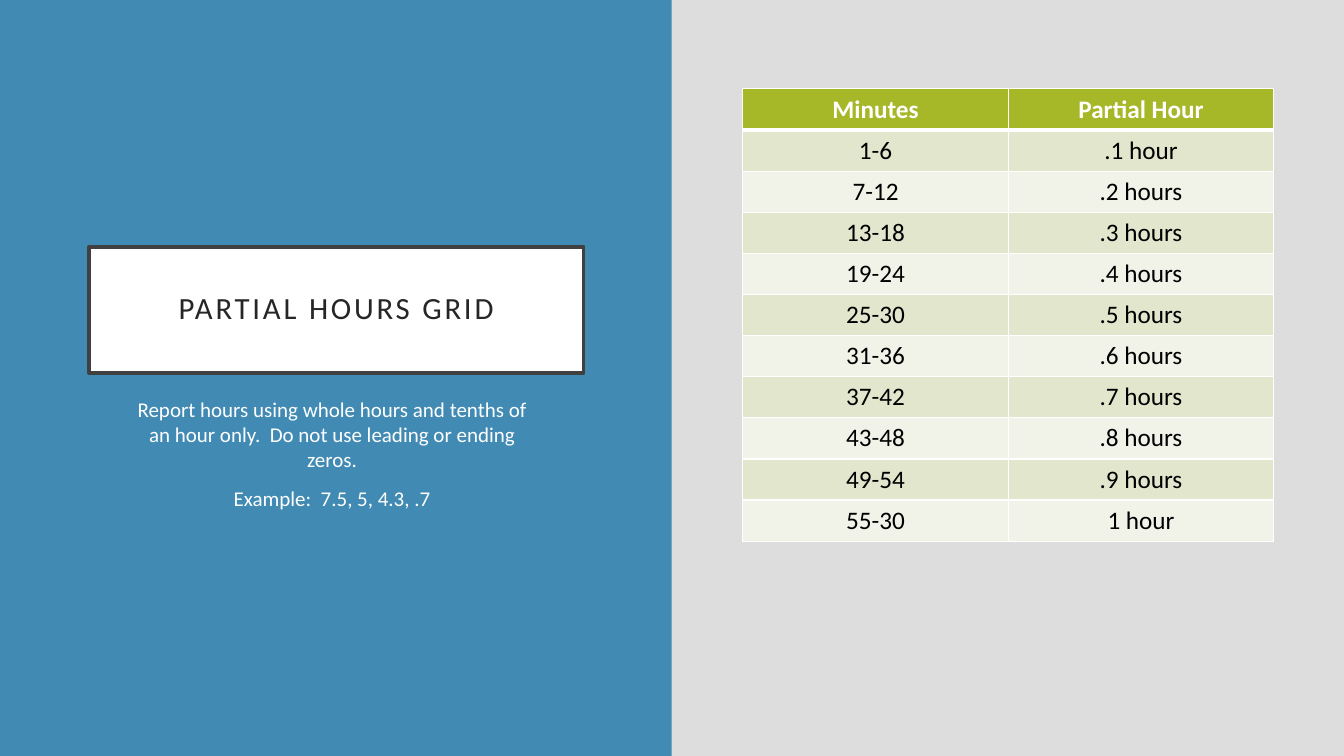
from lxml.etree import SubElement
from pptx import Presentation
from pptx.dml.color import RGBColor
from pptx.enum.shapes import MSO_SHAPE
from pptx.enum.text import MSO_ANCHOR, PP_ALIGN
from pptx.oxml.ns import qn
from pptx.util import Cm, Pt

COLOURS = {
    "background": "DDDDDD",
    "panel": "418AB3",
    "white": "FFFFFF",
    "frame": "404040",
    "title": "262626",
    "header": "A6B727",
    "odd_row": "E1E6CD",
    "even_row": "F1F3E8",
    "black": "000000",
}
FONT = "Calibri"
HEADINGS = ("Minutes", "Partial Hour")
PARTIAL_HOURS = (
    ("1-6", ".1 hour"),
    ("7-12", ".2 hours"),
    ("13-18", ".3 hours"),
    ("19-24", ".4 hours"),
    ("25-30", ".5 hours"),
    ("31-36", ".6 hours"),
    ("37-42", ".7 hours"),
    ("43-48", ".8 hours"),
    ("49-54", ".9 hours"),
    ("55-30", "1 hour"),
)
INSTRUCTIONS = (
    "Report hours using whole hours and tenths of an hour only.  Do not use leading or ending zeros.",
    "Example:  7.5, 5, 4.3, .7",
)


def colour(name):
    """Return the named colour."""
    return RGBColor.from_string(COLOURS[name])


def paint(fill, name):
    """Make a fill solid in the named colour."""
    fill.solid()
    fill.fore_color.rgb = colour(name)


def style_paragraph(para, size, ink, bold=False):
    """Centre a paragraph and set its font."""
    para.alignment = PP_ALIGN.CENTER
    para.font.name = FONT
    para.font.size = Pt(size)
    para.font.bold = bold
    para.font.color.rgb = colour(ink)


def add_rectangle(page, left, top, width, height, fill):
    """Add a plain rectangle without outline or shadow."""
    box = page.shapes.add_shape(MSO_SHAPE.RECTANGLE, left, top, width, height)
    box.shadow.inherit = False
    paint(box.fill, fill)
    box.line.fill.background()
    return box


def add_title(page, text):
    """Add the framed title with widely spaced letters."""
    box = add_rectangle(page, Cm(2.24), Cm(6.22), Cm(12.47), Cm(3.18), "white")
    paint(box.line.fill, "frame")
    box.line.width = Pt(2.5)
    frame = box.text_frame
    frame.word_wrap = True
    frame.vertical_anchor = MSO_ANCHOR.MIDDLE
    frame.margin_left = frame.margin_right = Cm(0.5)
    frame.margin_top = frame.margin_bottom = Cm(0.5)
    para = frame.paragraphs[0]
    style_paragraph(para, 22, "title")
    para.line_spacing = 0.9
    span = para.add_run()
    span.text = text
    span._r.get_or_add_rPr().set("spc", "200")


def add_instructions(page, lines):
    """Add the instructions below the title."""
    box = page.shapes.add_textbox(Cm(3.1), Cm(9.86), Cm(10.54), Cm(6.1))
    frame = box.text_frame
    frame.word_wrap = True
    frame.text = "\n".join(lines)
    for para in frame.paragraphs:
        style_paragraph(para, 15, "white")
        para.space_before = Pt(10)


def add_border(cell, side, width):
    """Draw one white cell border."""
    properties = cell._tc.get_or_add_tcPr()
    line = SubElement(properties, qn(f"a:ln{side}"), w=str(Pt(width)))
    solid = SubElement(line, qn("a:solidFill"))
    SubElement(solid, qn("a:srgbClr"), val=COLOURS["white"])


def fill_cell(cell, text, row):
    """Write and style one cell according to its row."""
    is_header = row == 0
    widths = {"L": 1, "R": 1, "T": 3 if row == 1 else 1, "B": 3 if is_header else 1}
    for side, width in widths.items():
        add_border(cell, side, width)
    band = "odd_row" if row % 2 else "even_row"
    paint(cell.fill, "header" if is_header else band)
    cell.margin_left = cell.margin_right = Cm(0.18)
    cell.margin_top = cell.margin_bottom = Cm(0.13)
    cell.text = text
    ink = "white" if is_header else "black"
    style_paragraph(cell.text_frame.paragraphs[0], 18, ink, is_header)


def add_hours_table(page, rows):
    """Add the table that turns minutes into partial hours."""
    row_height = Cm(1.03)
    table = page.shapes.add_table(
        len(rows), len(rows[0]), Cm(18.72), Cm(2.24), Cm(13.38), row_height * len(rows)
    ).table
    for row, texts in enumerate(rows):
        table.rows[row].height = row_height
        for column, text in enumerate(texts):
            fill_cell(table.cell(row, column), text, row)


def main():
    """Build and save the deck."""
    deck = Presentation()
    deck.slide_width, deck.slide_height = Cm(33.87), Cm(19.05)
    page = deck.slides.add_slide(deck.slide_layouts[6])
    paint(page.background.fill, "background")
    add_rectangle(page, Cm(0), Cm(0), Cm(16.93), deck.slide_height, "panel")
    add_title(page, "PARTIAL HOURS GRID")
    add_hours_table(page, (HEADINGS, *PARTIAL_HOURS))
    add_instructions(page, INSTRUCTIONS)
    deck.save("out.pptx")


if __name__ == "__main__":
    main()
